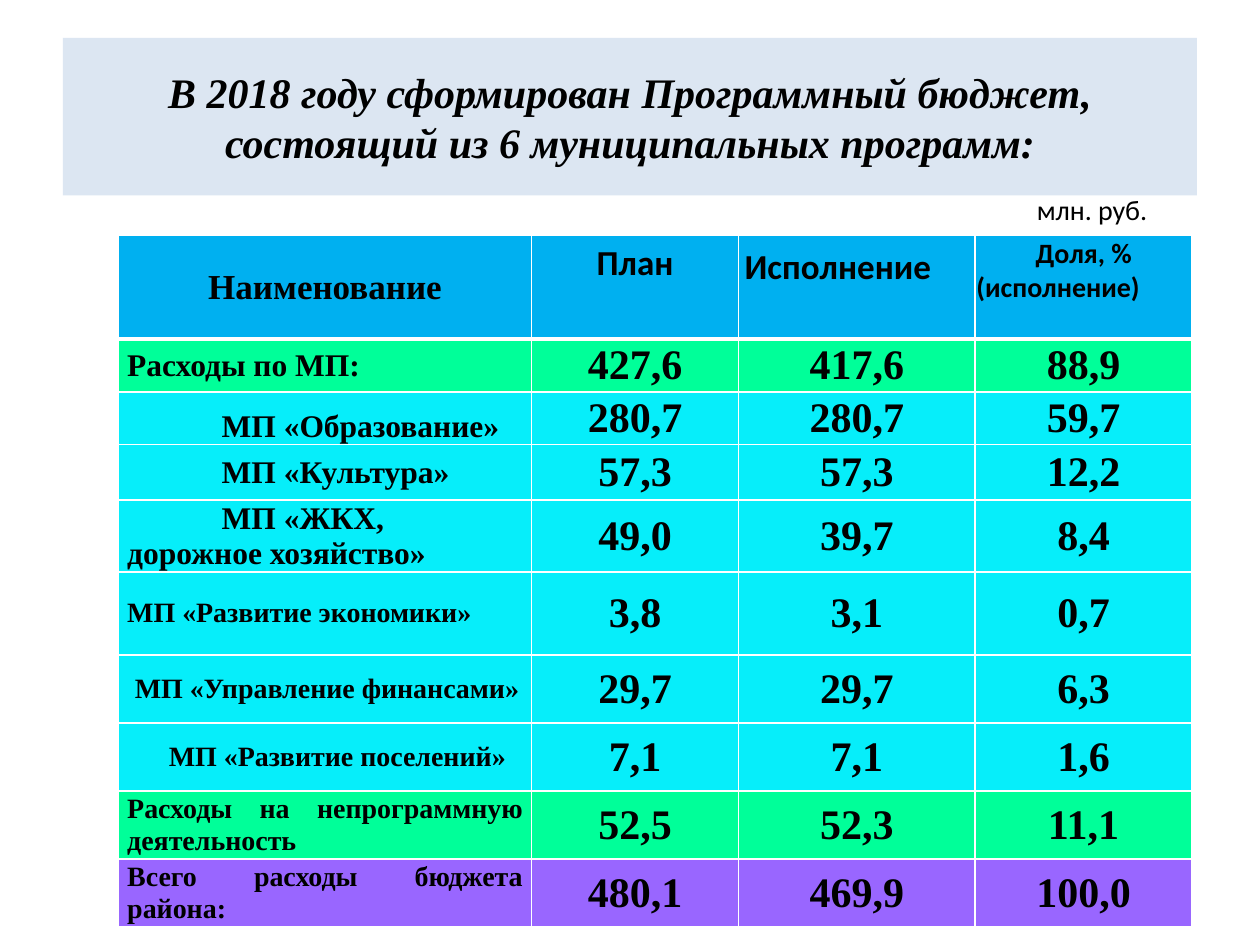
from lxml import etree
from pptx import Presentation
from pptx.dml.color import RGBColor
from pptx.enum.shapes import MSO_SHAPE
from pptx.enum.text import MSO_ANCHOR as ANCHOR, PP_ALIGN as ALIGN
from pptx.oxml.ns import qn
from pptx.util import Inches, Pt

COLORS = {
    "text": "000000", "title": "DCE6F2", "border": "FFFFFF", "header": "00B0F0",
    "group": "00FF99", "program": "06EEFA", "total": "9966FF",
}
SERIF, SANS = "Times New Roman", "Calibri"

COLUMN_WIDTHS = [3.28, 1.64, 1.88, 1.72]
HEADER_HEIGHT = 0.82
# text, font, size, alignment, anchor, left and top margin, first-line indent
HEADERS = [
    ("Наименование", SERIF, 20, ALIGN.CENTER, ANCHOR.MIDDLE, 0.01, 0.01, 0),
    ("План", SANS, 20, ALIGN.CENTER, ANCHOR.TOP, 0.01, 0.05, 0),
    ("Исполнение", SANS, 20, ALIGN.LEFT, ANCHOR.TOP, 0.05, 0.08, 0),
    ("Доля, % (исполнение)", SANS, 16, ALIGN.LEFT, ANCHOR.TOP, 0.01, 0.01, 0.47),
]
# kind, height, name, name size, first-line indent, plan, actual, share
ROWS = [
    ("group", 0.42, "Расходы по МП:", 18, 0, "427,6", "417,6", "88,9"),
    ("program", 0.42, "МП «Образование»", 18, 0.75, "280,7", "280,7", "59,7"),
    ("program", 0.44, "МП «Культура»", 18, 0.75, "57,3", "57,3", "12,2"),
    ("program", 0.57, "МП «ЖКХ, дорожное хозяйство»", 18, 0.75, "49,0", "39,7", "8,4"),
    ("program", 0.66, "МП «Развитие экономики»", 16, 0, "3,8", "3,1", "0,7"),
    ("program", 0.54, "МП «Управление финансами»", 16, 0.06, "29,7", "29,7", "6,3"),
    ("program", 0.54, "МП «Развитие поселений»", 16, 0.33, "7,1", "7,1", "1,6"),
    ("group", 0.54, "Расходы на непрограммную деятельность", 16, 0, "52,5", "52,3", "11,1"),
    ("total", 0.54, "Всего расходы бюджета района:", 16, 0, "480,1", "469,9", "100,0"),
]


def rgb(name):
    return RGBColor.from_string(COLORS[name])


def write(frame, text, font, size, align=ALIGN.LEFT, bold=True, italic=False, indent=0):
    frame.text = text
    paragraph = frame.paragraphs[0]
    paragraph.alignment = align
    if indent:
        properties = paragraph._p.get_or_add_pPr()
        properties.set("marL", "0")
        properties.set("indent", str(Inches(indent)))
    style = paragraph.runs[0].font
    style.name, style.size = font, Pt(size)
    style.bold, style.italic = bold, italic
    style.color.rgb = rgb("text")


def paint(cell, fill, bottom_width=1):
    """Fill a cell and draw its four borders."""
    cell.fill.solid()
    cell.fill.fore_color.rgb = rgb(fill)
    widths = {"lnL": 1, "lnR": 1, "lnT": 1, "lnB": bottom_width}
    for position, (side, width) in enumerate(widths.items()):
        line = etree.Element(qn(f"a:{side}"), w=str(Pt(width)))
        solid = etree.SubElement(line, qn("a:solidFill"))
        etree.SubElement(solid, qn("a:srgbClr"), val=COLORS["border"])
        cell._tc.get_or_add_tcPr().insert(position, line)


def set_margins(cell, left, top, right, bottom=0):
    cell.margin_left, cell.margin_top = Inches(left), Inches(top)
    cell.margin_right, cell.margin_bottom = Inches(right), Inches(bottom)


def add_title(slide, left, top, width, height):
    banner = slide.shapes.add_shape(
        MSO_SHAPE.RECTANGLE, Inches(left), Inches(top), Inches(width), Inches(height))
    banner.shadow.inherit = False
    banner.fill.solid()
    banner.fill.fore_color.rgb = rgb("title")
    banner.line.fill.background()
    frame = banner.text_frame
    frame.word_wrap = True
    frame.vertical_anchor = ANCHOR.MIDDLE
    frame.margin_left = frame.margin_right = Inches(0.5)
    write(frame, "В 2018 году сформирован Программный бюджет, "
          "состоящий из 6 муниципальных программ:", SERIF, 24, ALIGN.CENTER, italic=True)


def add_unit(slide, left, top, width, height):
    unit = slide.shapes.add_textbox(
        Inches(left), Inches(top), Inches(width), Inches(height))
    unit.text_frame.word_wrap = True
    write(unit.text_frame, "млн. руб.", SANS, 16, bold=False)


def fill_header(table):
    for column, header in enumerate(HEADERS):
        text, font, size, align, anchor, left, top, indent = header
        cell = table.cell(0, column)
        paint(cell, "header", bottom_width=3)
        set_margins(cell, left, top, 0.01)
        cell.vertical_anchor = anchor
        write(cell.text_frame, text, font, size, align, indent=indent)


def fill_row(table, index, kind, name, name_size, indent, values):
    for column, text in enumerate([name, *values]):
        cell = table.cell(index, column)
        paint(cell, kind)
        set_margins(cell, 0.07, 0, 0.07)
        cell.vertical_anchor = ANCHOR.MIDDLE
        if column:
            write(cell.text_frame, text, SERIF, 24, ALIGN.CENTER)
        else:
            align = ALIGN.JUSTIFY if name_size == 16 else ALIGN.LEFT
            write(cell.text_frame, text, SERIF, name_size, align, indent=indent)


def add_budget_table(slide, left, top):
    heights = [HEADER_HEIGHT] + [row[1] for row in ROWS]
    table = slide.shapes.add_table(
        len(heights), len(COLUMN_WIDTHS), Inches(left), Inches(top),
        Inches(sum(COLUMN_WIDTHS)), Inches(sum(heights))).table
    for column, width in zip(table.columns, COLUMN_WIDTHS):
        column.width = Inches(width)
    for row, height in zip(table.rows, heights):
        row.height = Inches(height)
    fill_header(table)
    for index, (kind, _, name, size, indent, *values) in enumerate(ROWS, start=1):
        fill_row(table, index, kind, name, size, indent, values)
    table.cell(2, 0).vertical_anchor = ANCHOR.BOTTOM


def main():
    deck = Presentation()
    deck.slide_width, deck.slide_height = Inches(10), Inches(7.5)
    slide = deck.slides.add_slide(deck.slide_layouts[6])
    add_title(slide, 0.5, 0.3, 9, 1.25)
    add_budget_table(slide, 0.94, 1.87)
    add_unit(slide, 8.13, 1.48, 1.48, 0.37)
    deck.save("out.pptx")


if __name__ == "__main__":
    main()
